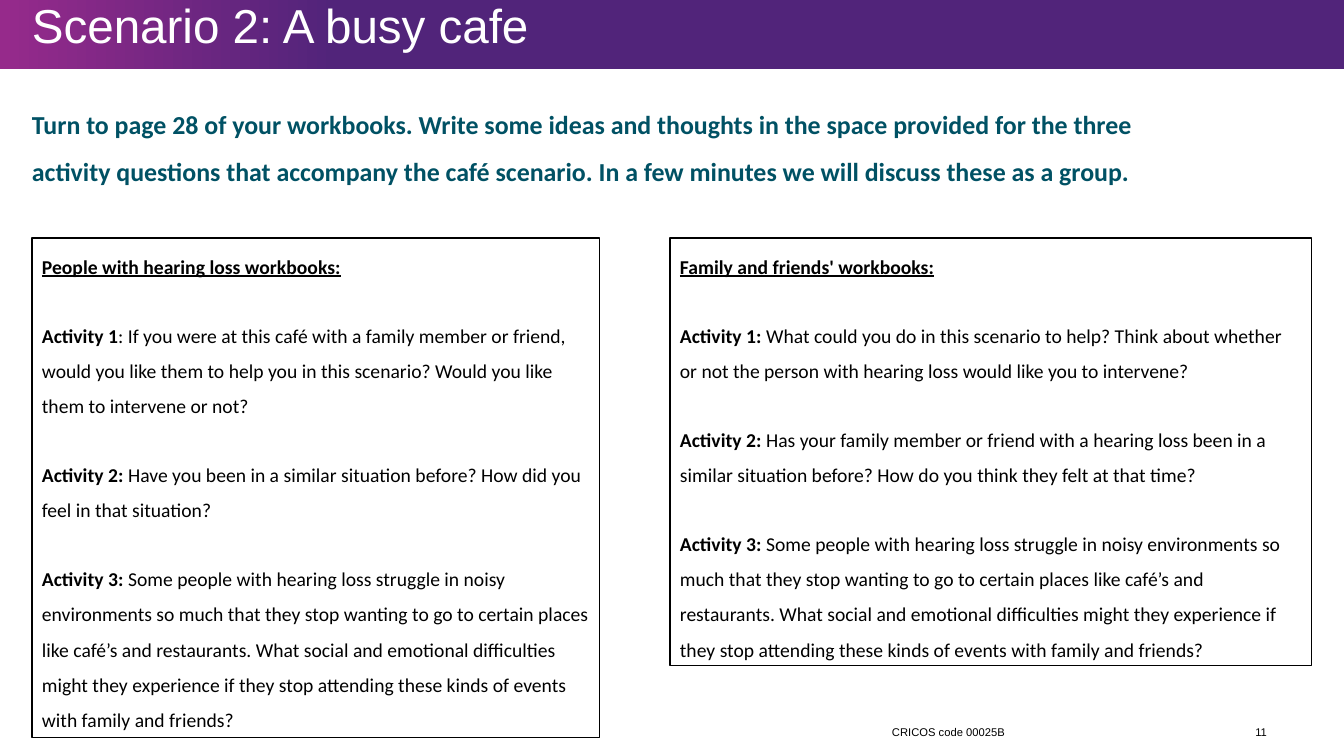
from pptx import Presentation
from pptx import util as u
from pptx.dml.color import RGBColor
from pptx.enum import shapes, text

PX = u.Inches(1) / 100.8
WHITE = RGBColor(0xFF, 0xFF, 0xFF)
BLACK = RGBColor(0, 0, 0)
TEAL = RGBColor(0x00, 0x51, 0x64)
PURPLE = RGBColor(0x51, 0x24, 0x7A)
PINK = RGBColor(0x96, 0x2A, 0x8B)

STRUGGLE = ("Some people with hearing loss struggle in noisy environments so much that "
            "they stop wanting to go to certain places like café’s and restaurants. "
            "What social and emotional difficulties might they experience if they stop "
            "attending these kinds of events with family and friends?")
INTRO = ("Turn to page 28 of your workbooks. Write some ideas and thoughts in the space "
         "provided for the three activity questions that accompany the café scenario. "
         "In a few minutes we will discuss these as a group.")
LOSS = [
    ("People with hearing loss workbooks:", ""),
    ("Activity 1", ": If you were at this café with a family member or friend, would you "
     "like them to help you in this scenario? Would you like them to intervene or not?"),
    ("Activity 2:", " Have you been in a similar situation before? How did you feel in "
     "that situation?"),
    ("Activity 3:", " " + STRUGGLE),
]
FAMILY = [
    ("Family and friends' workbooks:", ""),
    ("Activity 1: ", "What could you do in this scenario to help? Think about whether or "
     "not the person with hearing loss would like you to intervene?"),
    ("Activity 2: ", "Has your family member or friend with a hearing loss been in a "
     "similar situation before? How do you think they felt at that time?"),
    ("Activity 3: ", STRUGGLE),
]


def emu(box):
    return [u.Emu(round(n * PX)) for n in box]


def style(run, name, size, color, bold=False):
    font = run.font
    font.name, font.size, font.bold = name, u.Pt(size), bold
    font.color.rgb = color


def label(shape, words, name, size, color, bold=False,
          anchor=text.MSO_ANCHOR.MIDDLE, align=text.PP_ALIGN.LEFT, line=1.0):
    frame = shape.text_frame
    frame.text = words
    frame.word_wrap = True
    frame.auto_size = text.MSO_AUTO_SIZE.NONE
    frame.vertical_anchor = anchor
    frame.margin_left = frame.margin_right = 0
    frame.margin_top = frame.margin_bottom = 0
    para = frame.paragraphs[0]
    para.alignment, para.line_spacing = align, line
    style(para.runs[0], name, size, color, bold)


def header(slide, box):
    x, y, w, h = box
    band = slide.shapes.add_shape(shapes.MSO_SHAPE.RECTANGLE, *emu(box))
    band.shadow.inherit = False
    band.line.fill.background()
    band.fill.gradient()
    band.fill.gradient_angle = 0
    for stop, (place, color) in zip(band.fill.gradient_stops, [(0, PINK), (0.25, PURPLE)]):
        stop.position = place
        stop.color.rgb = color
    title = slide.shapes.title
    title.left, title.top, title.width, title.height = emu((x + 32, y + 3, 1190, 51))
    label(title, "Scenario 2: A busy cafe", "Arial", 34, WHITE, line=0.9)
    tree = slide.shapes._spTree
    tree.remove(band._element)
    tree.insert(2, band._element)


def intro(slide, box):
    label(slide.shapes.add_textbox(*emu(box)), INTRO, "Calibri", 18.5, TEAL, True,
          anchor=text.MSO_ANCHOR.TOP, line=1.5)


def panel(slide, box, items):
    card = slide.shapes.add_shape(shapes.MSO_SHAPE.RECTANGLE, *emu(box))
    card.shadow.inherit = False
    card.fill.background()
    card.line.color.rgb = BLACK
    card.line.width = u.Pt(0.75)
    frame = card.text_frame
    frame.word_wrap = True
    frame.vertical_anchor = text.MSO_ANCHOR.TOP
    for i, (lead, rest) in enumerate(items):
        para = frame.add_paragraph() if i else frame.paragraphs[0]
        para.alignment = text.PP_ALIGN.LEFT
        para.line_spacing = 1.5
        para.space_before = u.Pt(12 if i else 0)
        para.space_after = u.Pt(12)
        run = para.add_run()
        run.text = lead
        style(run, "Calibri", 14, BLACK, True)
        run.font.underline = i == 0
        if rest:
            run = para.add_run()
            run.text = rest
            style(run, "Calibri", 14, BLACK)


def footer(slide, box):
    x, y, w, h = box
    label(slide.shapes.add_textbox(*emu((x, y, 264, h))), "CRICOS code 00025B",
          "Arial", 8, BLACK)
    label(slide.shapes.add_textbox(*emu((x + w - 31, y, 31, h))), "11",
          "Arial", 8, BLACK, align=text.PP_ALIGN.RIGHT)


def main():
    deck = Presentation()
    deck.slide_width, deck.slide_height = emu((1344, 756))
    slide = deck.slides.add_slide(deck.slide_layouts[5])
    header(slide, (0, 0, 1344, 69))
    intro(slide, (32, 93, 1137, 165))
    panel(slide, (670, 238, 642, 428), FAMILY)
    panel(slide, (32, 238, 568, 500), LOSS)
    footer(slide, (892, 719, 375, 26))
    deck.save("out.pptx")


if __name__ == "__main__":
    main()
